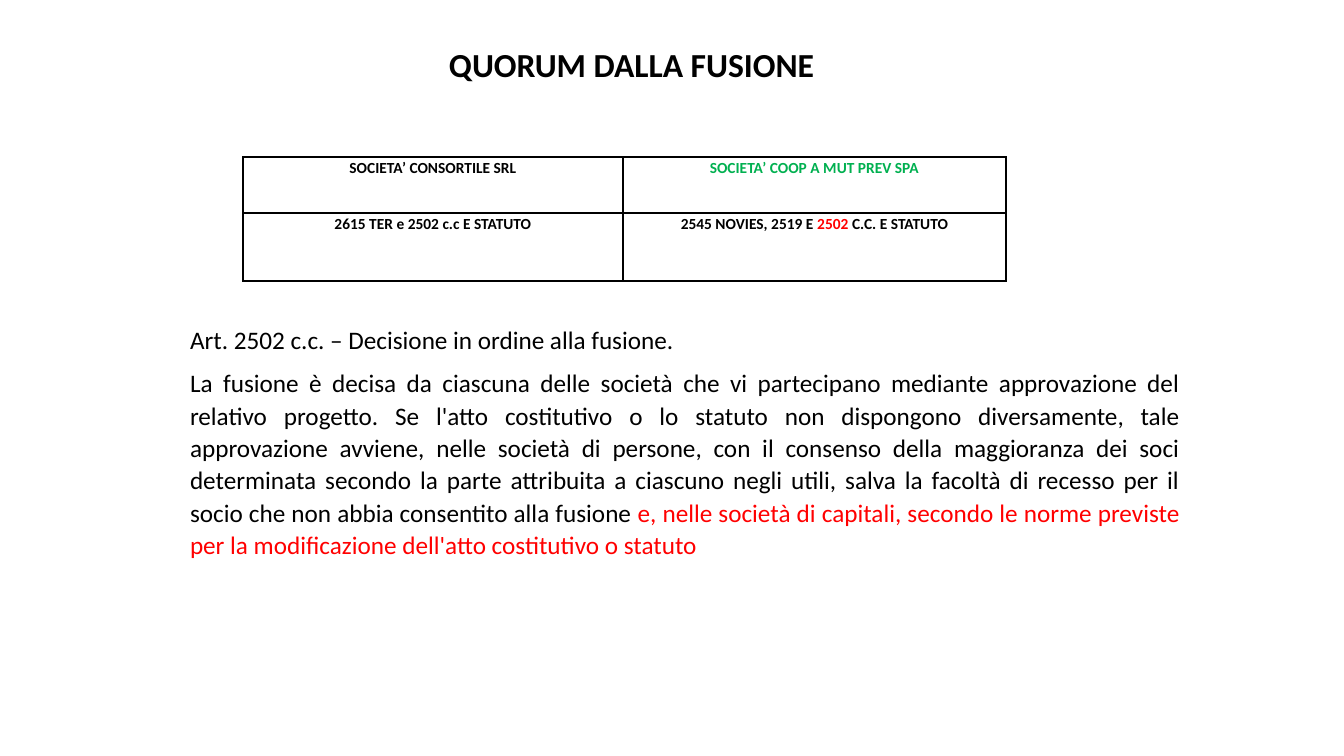
from lxml import etree
from pptx import Presentation
from pptx import util as u
from pptx.dml.color import RGBColor
from pptx.enum import text
from pptx.oxml import ns

BLACK = RGBColor(0, 0, 0)
RED = RGBColor(0xFF, 0, 0)
GREEN = RGBColor(0, 0xB0, 0x50)
EMU_PER_PX = 914400 / 100.8
FONT = "Calibri"

QUORUM_ROWS = [
    [[("SOCIETA’ CONSORTILE SRL", BLACK)],
     [("SOCIETA’ COOP A MUT PREV SPA", GREEN)]],
    [[("2615 TER e 2502 c.c E STATUTO", BLACK)],
     [("2545 NOVIES, 2519 E ", BLACK), ("2502", RED), (" C.C. E STATUTO", BLACK)]],
]
ARTICLE = [
    [("Art. 2502 c.c. – Decisione in ordine alla fusione.", BLACK)],
    [("La fusione è decisa da ciascuna delle società che vi partecipano mediante "
      "approvazione del relativo progetto. Se l'atto costitutivo o lo statuto non "
      "dispongono diversamente, tale approvazione avviene, nelle società di persone, "
      "con il consenso della maggioranza dei soci determinata secondo la parte "
      "attribuita a ciascuno negli utili, salva la facoltà di recesso per il socio "
      "che non abbia consentito alla fusione ", BLACK),
     ("e, nelle società di capitali, secondo le norme previste per la modificazione "
      "dell'atto costitutivo o statuto", RED)],
]


def px(length):
    return u.Emu(round(length * EMU_PER_PX))


def write_runs(paragraph, runs, size, align, bold=False, line=1.07, after=8):
    paragraph.alignment = align
    paragraph.line_spacing = line
    paragraph.space_before = u.Pt(0)
    paragraph.space_after = u.Pt(after)
    paragraph.font.name = FONT
    paragraph.font.size = u.Pt(size)
    paragraph.font.bold = bold
    for wording, color in runs:
        run = paragraph.add_run()
        run.text = wording
        run.font.color.rgb = color


def place(placeholder, box):
    placeholder.left, placeholder.top, placeholder.width, placeholder.height = map(px, box)
    frame = placeholder.text_frame
    frame.word_wrap = True
    frame.auto_size = text.MSO_AUTO_SIZE.NONE
    frame.vertical_anchor = text.MSO_ANCHOR.TOP
    frame.margin_left = frame.margin_right = px(10)
    frame.margin_top = frame.margin_bottom = px(5)
    return frame


def add_heading(slide, box):
    frame = place(slide.shapes.title, box)
    write_runs(frame.paragraphs[0], [("QUORUM DALLA FUSIONE", BLACK)], 24,
               text.PP_ALIGN.LEFT, bold=True, line=1.0, after=0)


def outline_cell(cell):
    properties = cell._tc.get_or_add_tcPr()
    for side in ("a:lnL", "a:lnR", "a:lnT", "a:lnB"):
        border = etree.SubElement(properties, ns.qn(side), w=str(u.Pt(1)))
        fill = etree.SubElement(border, ns.qn("a:solidFill"))
        etree.SubElement(fill, ns.qn("a:srgbClr"), val=str(BLACK))
    cell.fill.background()


def add_quorum_table(slide, box, column_widths, row_heights):
    table = slide.shapes.add_table(len(row_heights), len(column_widths), *map(px, box)).table
    table.first_row = table.horz_banding = False
    for column, width in zip(table.columns, column_widths):
        column.width = px(width)
    for row, height, contents in zip(table.rows, row_heights, QUORUM_ROWS):
        row.height = px(height)
        for cell, runs in zip(row.cells, contents):
            cell.margin_left = cell.margin_right = px(7)
            cell.margin_top = cell.margin_bottom = 0
            outline_cell(cell)
            write_runs(cell.text_frame.paragraphs[0], runs, 11,
                       text.PP_ALIGN.CENTER, bold=True)


def add_article(slide, box):
    frame = place(slide.placeholders[1], box)
    for index, runs in enumerate(ARTICLE):
        paragraph = frame.add_paragraph() if index else frame.paragraphs[0]
        write_runs(paragraph, runs, 18, text.PP_ALIGN.JUSTIFY)
        properties = paragraph._p.get_or_add_pPr()
        properties.set("marL", "0")
        properties.set("indent", "0")
        bullet_off = properties.makeelement(ns.qn("a:buNone"), {})
        properties.find(ns.qn("a:defRPr")).addprevious(bullet_off)


def main():
    deck = Presentation()
    deck.slide_width, deck.slide_height = px(1344), px(756)
    slide = deck.slides.add_slide(deck.slide_layouts[1])
    add_heading(slide, (439, 39, 800, 50))
    add_quorum_table(slide, (243, 157, 763, 124), (380, 383), (56, 68))
    add_article(slide, (180, 317, 1010, 249))
    deck.save("out.pptx")


if __name__ == "__main__":
    main()
